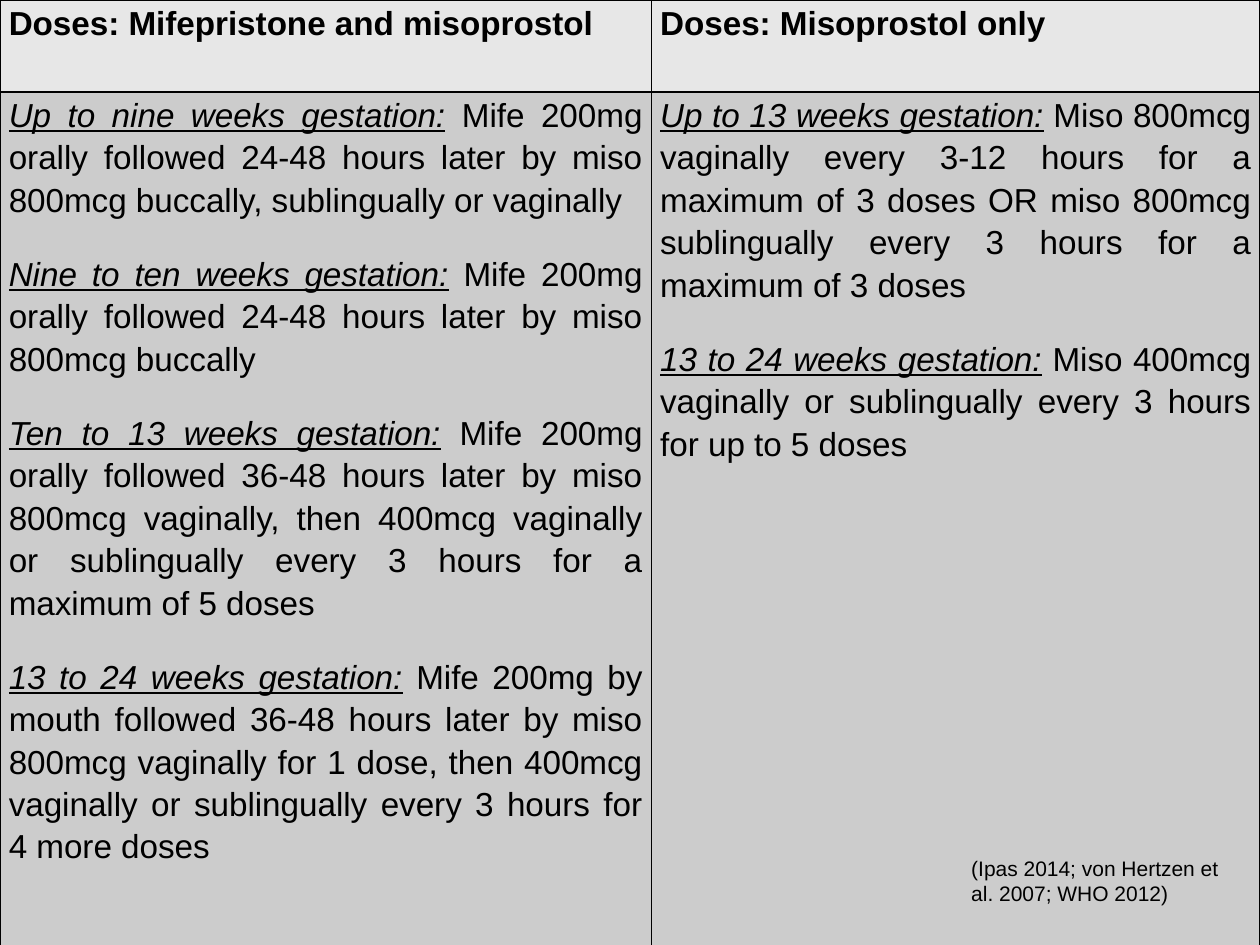
from lxml import etree
from pptx import Presentation
from pptx.dml.color import RGBColor
from pptx.enum.text import PP_ALIGN
from pptx.oxml.ns import qn
from pptx.util import Inches, Pt

LEFT, JUSTIFY = PP_ALIGN.LEFT, PP_ALIGN.JUSTIFY
BLACK = RGBColor(0x00, 0x00, 0x00)
PALE = RGBColor(0xE7, 0xE7, 0xE7)
GREY = RGBColor(0xCC, 0xCC, 0xCC)

COLS = (5.17, 4.83)
ROWS = (0.73, 6.93)
HEADS = (
    ("Doses: Mifepristone and misoprostol", LEFT),
    ("Doses: Misoprostol only", JUSTIFY),
)
DOSES = (
    (
        ("Up to nine weeks gestation:",
         "Mife 200mg orally followed 24-48 hours later by miso 800mcg "
         "buccally, sublingually or vaginally"),
        ("Nine to ten weeks gestation:",
         "Mife 200mg orally followed 24-48 hours later by miso 800mcg buccally"),
        ("Ten to 13 weeks gestation:",
         "Mife 200mg orally followed 36-48 hours later by miso 800mcg "
         "vaginally, then 400mcg vaginally or sublingually every 3 hours "
         "for a maximum of 5 doses"),
        ("13 to 24 weeks gestation:",
         "Mife 200mg by mouth followed 36-48 hours later by miso 800mcg "
         "vaginally for 1 dose, then 400mcg vaginally or sublingually "
         "every 3 hours for 4 more doses"),
    ),
    (
        ("Up to 13 weeks gestation:",
         "Miso 800mcg vaginally every 3-12 hours for a maximum of 3 doses "
         "OR miso 800mcg sublingually every 3 hours for a maximum of 3 doses"),
        ("13 to 24 weeks gestation:",
         "Miso 400mcg vaginally or sublingually every 3 hours for up to 5 doses"),
    ),
)


class Page:
    """Holds the text style and the current slide."""

    font = "Arial"
    size = 19

    def __init__(self, slide):
        self.slide = slide

    def style(self, para, size, bold=False):
        font = para.font
        font.name, font.size, font.bold = self.font, Pt(size), bold
        font.color.rgb = BLACK

    def table(self, cols, rows):
        frame = self.slide.shapes.add_table(
            len(rows), len(cols), 0, 0, Inches(sum(cols)), Inches(sum(rows)))
        grid = frame.table
        for col, width in zip(grid.columns, cols):
            col.width = Inches(width)
        for row, height in zip(grid.rows, rows):
            row.height = Inches(height)
        return grid

    def border(self, cell):
        """Draw a thin black line on all four sides of the cell."""
        props = cell._tc.get_or_add_tcPr()
        for place, side in enumerate(("a:lnL", "a:lnR", "a:lnT", "a:lnB")):
            line = etree.Element(qn(side), w=str(Pt(1)))
            fill = etree.SubElement(line, qn("a:solidFill"))
            etree.SubElement(fill, qn("a:srgbClr"), val=str(BLACK))
            props.insert(place, line)

    def cell(self, cell, fill, paras, align, bold=False):
        """Fill a cell; each paragraph is a (lead, body) pair."""
        cell.fill.solid()
        cell.fill.fore_color.rgb = fill
        self.border(cell)
        cell.margin_left = cell.margin_right = Inches(0.07)
        cell.margin_top = cell.margin_bottom = 0
        frame = cell.text_frame
        for i, (lead, body) in enumerate(paras):
            para = frame.add_paragraph() if i else frame.paragraphs[0]
            para.alignment = align
            para.line_spacing = 1.15
            para.space_before, para.space_after = Pt(6), Pt(12)
            self.style(para, self.size, bold)
            if lead:
                run = para.add_run()
                run.text = lead
                run.font.italic = run.font.underline = True
                body = " " + body
            para.add_run().text = body

    def note(self, text, left, top, width, height):
        box = self.slide.shapes.add_textbox(
            Inches(left), Inches(top), Inches(width), Inches(height))
        frame = box.text_frame
        frame.word_wrap = True
        frame.text = text
        self.style(frame.paragraphs[0], 12)


def main():
    deck = Presentation()
    deck.slide_width, deck.slide_height = Inches(10), Inches(7.5)
    page = Page(deck.slides.add_slide(deck.slide_layouts[6]))
    grid = page.table(COLS, ROWS)
    for i, ((head, align), doses) in enumerate(zip(HEADS, DOSES)):
        page.cell(grid.cell(0, i), PALE, [("", head)], align, bold=True)
        page.cell(grid.cell(1, i), GREY, doses, JUSTIFY)
    page.note("(Ipas 2014; von Hertzen et al. 2007; WHO 2012)",
              7.61, 6.74, 2.25, 0.5)
    deck.save("out.pptx")


if __name__ == "__main__":
    main()
